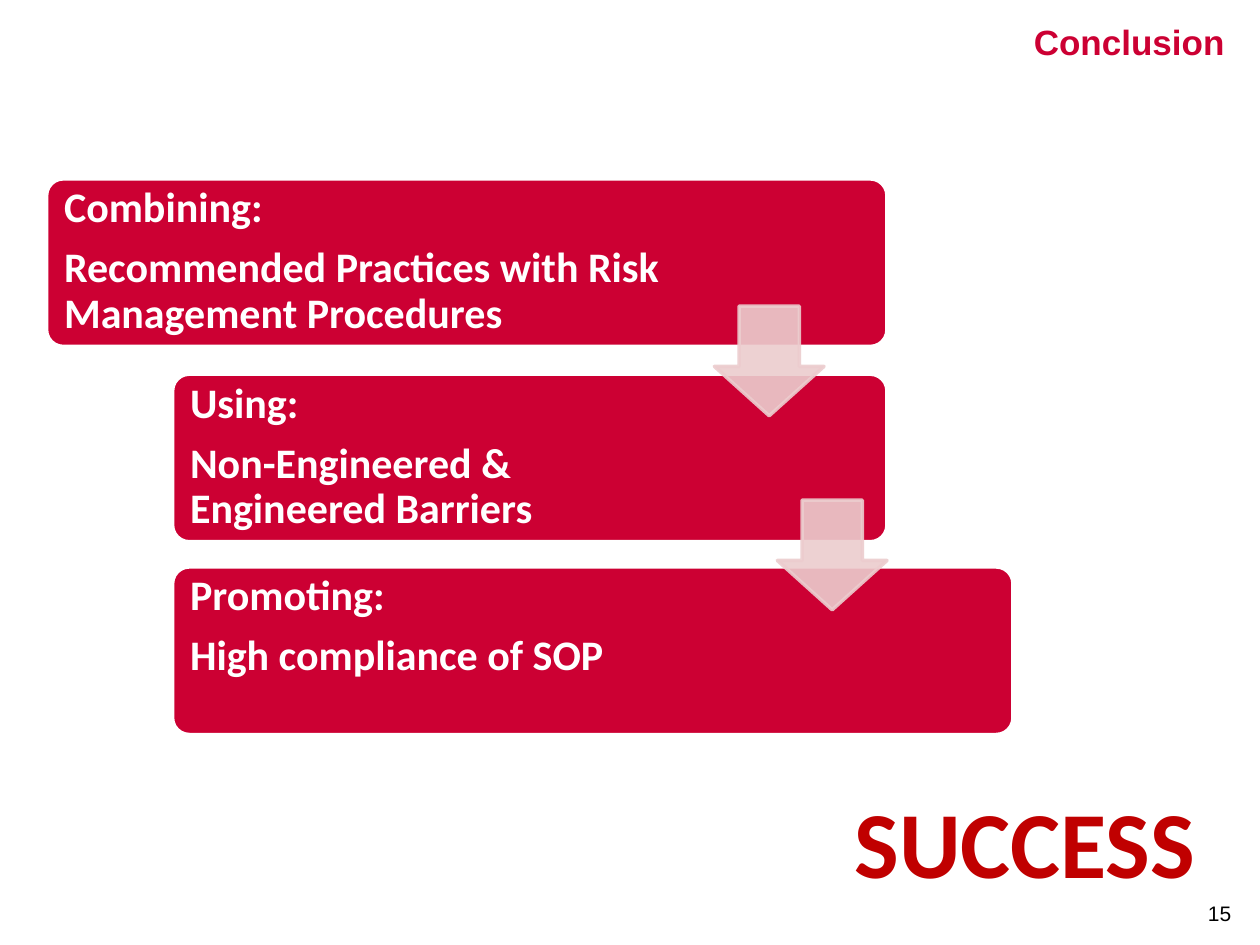
from dataclasses import dataclass

from lxml.etree import SubElement
from pptx import Presentation
from pptx.dml.color import RGBColor
from pptx.enum.shapes import MSO_SHAPE as Shape
from pptx.enum.text import MSO_ANCHOR as Anchor, PP_ALIGN as Align
from pptx.oxml.ns import qn
from pptx.util import Inches, Pt


@dataclass(frozen=True)
class Theme:
    red: str = "CC0033"
    dark_red: str = "C00000"
    pink: str = "ECCCCE"
    white: str = "FFFFFF"
    black: str = "000000"
    heading_font: str = "Arial"
    body_font: str = "Calibri"
    title_size: int = 20
    step_size: int = 24
    success_size: int = 54
    number_size: int = 12
    border: int = 2


def write(frame, text, *, font, size, color, bold=True, align=Align.LEFT,
          line_spacing=None, after=None):
    """Fill a text frame; each line of the text becomes a paragraph."""
    frame.text = text
    for paragraph in frame.paragraphs:
        paragraph.alignment = align
        paragraph.line_spacing = line_spacing
        paragraph.space_after = after
        for run in paragraph.runs:
            run.font.name, run.font.size, run.font.bold = font, Pt(size), bold
            run.font.color.rgb = RGBColor.from_string(color)


class SlideBuilder:
    def __init__(self, slide, theme):
        self.slide = slide
        self.theme = theme

    def title(self, text, left, top, width, height):
        title = self.slide.shapes.title
        title.left, title.top = Inches(left), Inches(top)
        title.width, title.height = Inches(width), Inches(height)
        title.text_frame.vertical_anchor = Anchor.MIDDLE
        write(title.text_frame, text, font=self.theme.heading_font,
              size=self.theme.title_size, color=self.theme.red, align=Align.RIGHT)

    def text(self, text, left, top, width, height, wrap=True, inset=None, **style):
        box = self.slide.shapes.add_textbox(
            Inches(left), Inches(top), Inches(width), Inches(height))
        frame = box.text_frame
        frame.word_wrap = wrap
        if inset is not None:
            frame.margin_top = frame.margin_bottom = Inches(inset)
        write(frame, text, **style)

    def shape(self, kind, left, top, width, height, fill, line, adjust, alpha=None):
        shape = self.slide.shapes.add_shape(
            kind, Inches(left), Inches(top), Inches(width), Inches(height))
        shape.shadow.inherit = False
        for index, value in enumerate(adjust):
            shape.adjustments[index] = value
        shape.fill.solid()
        shape.fill.fore_color.rgb = RGBColor.from_string(fill)
        shape.line.color.rgb = RGBColor.from_string(line)
        shape.line.width = Pt(self.theme.border)
        if alpha is not None:
            for color in shape._element.spPr.iter(qn("a:srgbClr")):
                SubElement(color, qn("a:alpha"), val=str(alpha * 1000))

    def step(self, text, left, top, width, text_width):
        theme = self.theme
        self.shape(Shape.ROUNDED_RECTANGLE, left, top, width, 1.33,
                   theme.red, theme.white, [0.1])
        self.text(text, left + 0.04, top + 0.04, text_width, 1.26, inset=0.02,
                  font=theme.body_font, size=theme.step_size, color=theme.white,
                  line_spacing=0.9, after=Pt(0.35 * theme.step_size))

    def arrow(self, left, top):
        self.shape(Shape.DOWN_ARROW, left, top, 0.87, 0.87,
                   self.theme.pink, self.theme.pink, [0.55, 0.45], alpha=90)


STEPS = [  # text, left, top, width, text width
    ("Combining:\nRecommended Practices with Risk Management Procedures",
     0.37, 1.42, 6.67, 4.99),
    ("Using:\nNon-Engineered & Engineered Barriers", 1.37, 2.97, 5.67, 4.22),
    ("Promoting:\nHigh compliance of SOP", 1.37, 4.5, 6.67, 4.98),
]
ARROWS = [(5.67, 2.43), (6.17, 3.97)]


def main():
    prs = Presentation()
    prs.slide_width, prs.slide_height = Inches(10), Inches(7.5)
    theme = Theme()
    title_only = prs.slide_layouts[5]
    page = SlideBuilder(prs.slides.add_slide(title_only), theme)

    # Heading and page number
    page.title("Conclusion", 5.25, 0.08, 4.57, 0.5)
    page.text("15", 8.06, 7.1, 1.81, 0.3, font=theme.heading_font,
              size=theme.number_size, color=theme.black, bold=False, align=Align.RIGHT)

    # Staircase of steps, with the arrows on top
    for step in STEPS:
        page.step(*step)
    for arrow in ARROWS:
        page.arrow(*arrow)

    # Outcome
    page.text("SUCCESS", 6.67, 6.17, 2.93, 1.01, wrap=False, font=theme.body_font,
              size=theme.success_size, color=theme.dark_red, align=Align.CENTER)

    prs.save("out.pptx")


if __name__ == "__main__":
    main()
